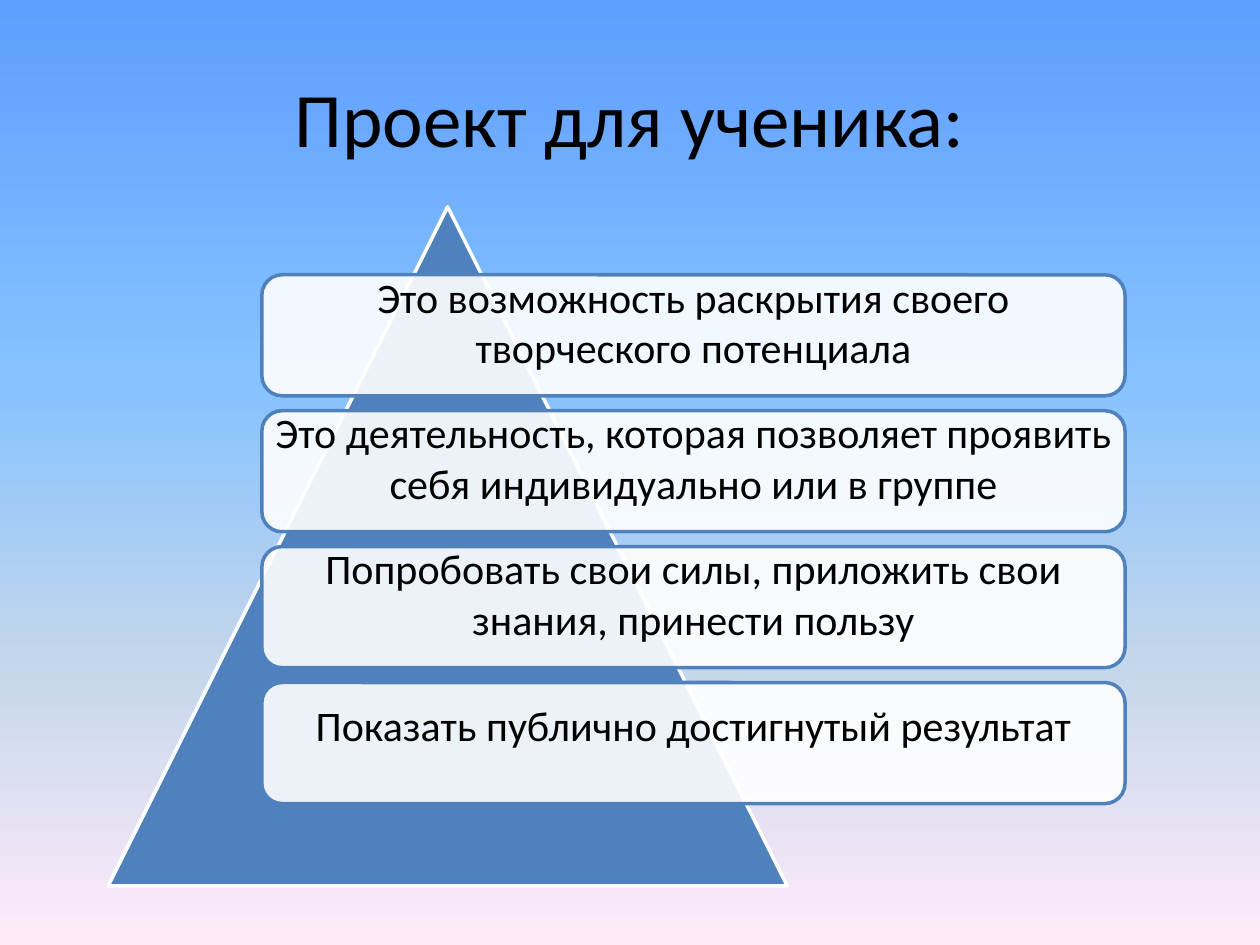
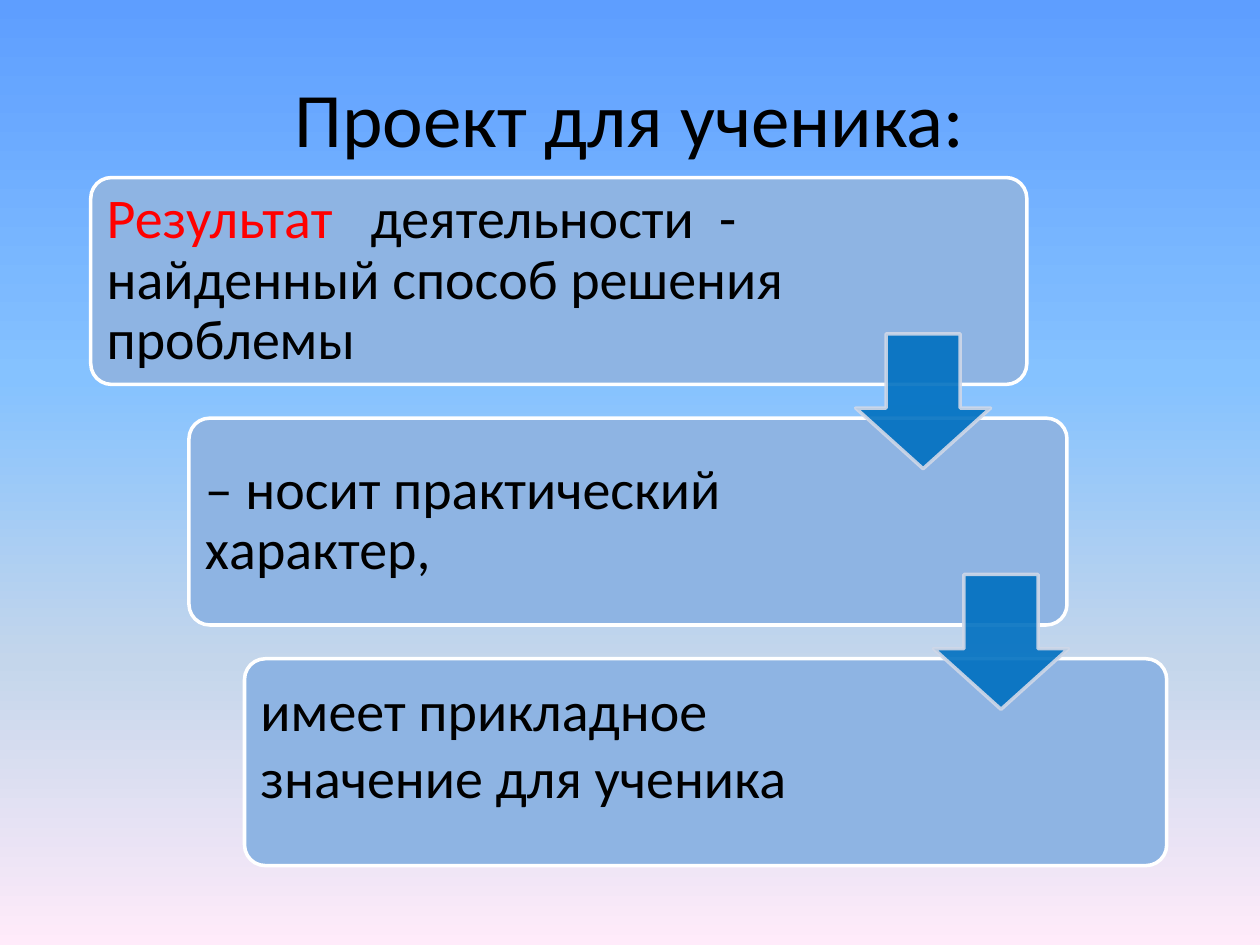
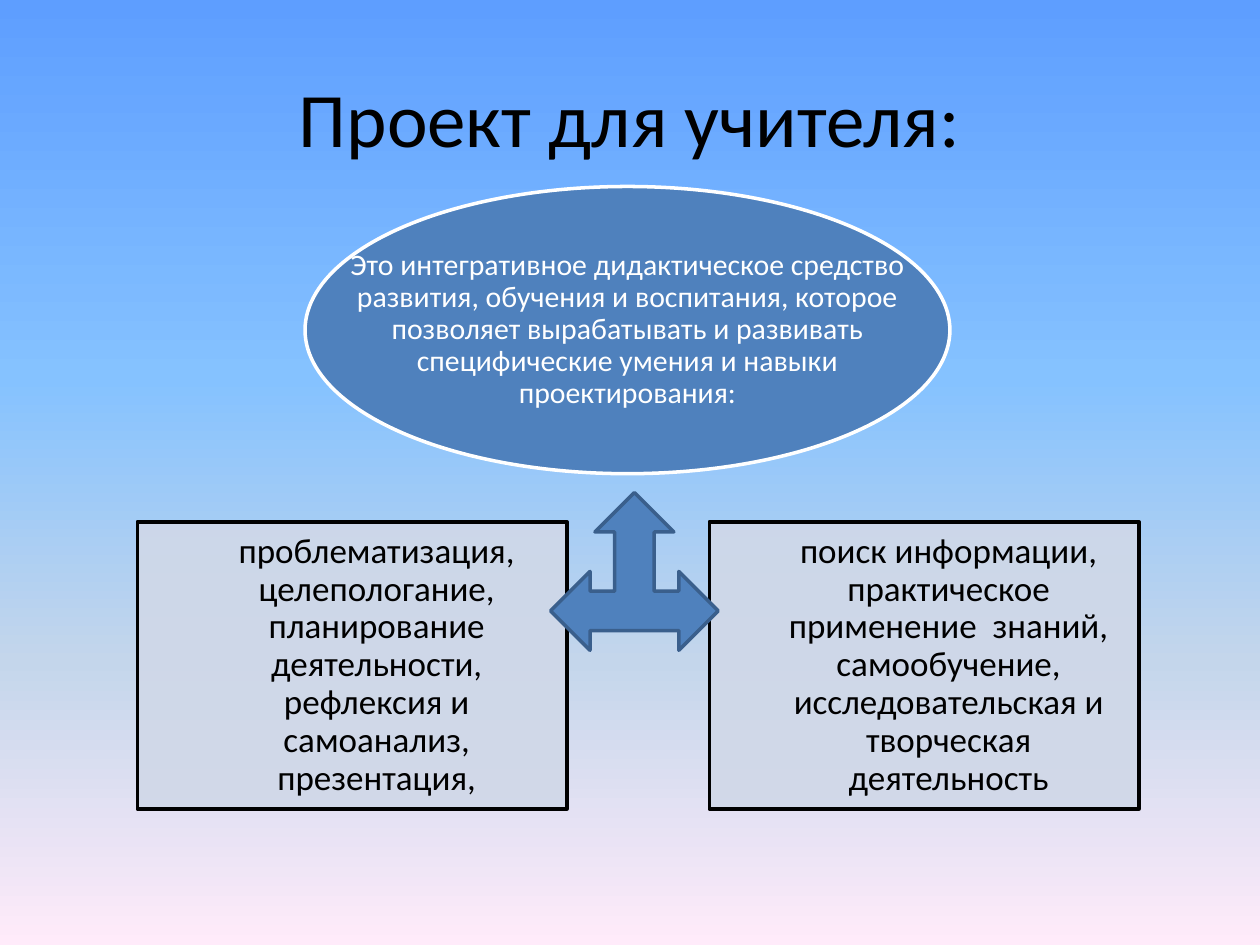
from lxml import etree
from pptx import Presentation
from pptx.dml.color import RGBColor
from pptx.enum.shapes import MSO_SHAPE
from pptx.enum.text import MSO_ANCHOR, PP_ALIGN
from pptx.oxml.ns import qn
from pptx.util import Cm, Pt

LEFT, CENTER = PP_ALIGN.LEFT, PP_ALIGN.CENTER
MIDDLE = MSO_ANCHOR.MIDDLE
ROUNDED, RECT = MSO_SHAPE.ROUNDED_RECTANGLE, MSO_SHAPE.RECTANGLE
TRIANGLE, OVAL = MSO_SHAPE.ISOSCELES_TRIANGLE, MSO_SHAPE.OVAL
DOWN_ARROW = MSO_SHAPE.DOWN_ARROW
THREE_WAY_ARROW = MSO_SHAPE.LEFT_RIGHT_UP_ARROW

FONT = "Calibri"
BLACK, WHITE, RED = "000000", "FFFFFF", "FF0000"
BLUE, DARK_BLUE, LIGHT_BLUE = "4F81BD", "3A5F8C", "8EB4E3"
ARROW_BLUE, PALE = "0070C0", "D0D8E8"
SKY = [(0, "5E9EFF"), (40, "85C2FF"), (70, "C4D6EB"), (100, "FFEBFA")]


def rgb(color):
    return RGBColor.from_string(color)


def paint_background(master):
    fill = master.background.fill
    fill.gradient()
    fill.gradient_angle = 270
    stops = master.element.find(".//" + qn("a:gsLst"))
    for stop in list(stops):
        stops.remove(stop)
    for percent, color in SKY:
        stop = etree.SubElement(stops, qn("a:gs"), pos=str(percent * 1000))
        etree.SubElement(stop, qn("a:srgbClr"), val=color)


def add_slide(prs, title):
    s = prs.slides.add_slide(prs.slide_layouts[5])
    s.shapes.title.text = title
    return s


def set_opacity(fill_parent, percent):
    color = fill_parent.find(qn("a:solidFill")).find(qn("a:srgbClr"))
    etree.SubElement(color, qn("a:alpha"), val=str(percent * 1000))


def add_figure(s, kind, box, fill, line, opacity=100, adjustments=()):
    """Add a preset shape; box is left, top, width, height in cm."""
    sp = s.shapes.add_shape(kind, *map(Cm, box))
    sp.shadow.inherit = False
    sp.fill.solid()
    sp.fill.fore_color.rgb = rgb(fill)
    sp.line.color.rgb = rgb(line)
    sp.line.width = Pt(2)
    for i, value in enumerate(adjustments):
        sp.adjustments[i] = value
    if opacity < 100:
        set_opacity(sp._element.spPr, opacity)
    return sp


def write(sp, runs, size, align=CENTER, spacing=0.9, left=0, right=0, bottom=0):
    """Fill a shape with one paragraph of (text, colour) runs; insets in cm."""
    tf = sp.text_frame
    frame = dict(word_wrap=True, vertical_anchor=MIDDLE, margin_top=0,
                 margin_left=Cm(left), margin_right=Cm(right),
                 margin_bottom=Cm(bottom))
    for name, value in frame.items():
        setattr(tf, name, value)
    p = tf.paragraphs[0]
    p.alignment = align
    p.line_spacing = spacing
    for text, color in runs:
        r = p.add_run()
        r.text = text
        for name, value in dict(name=FONT, size=Pt(size)).items():
            setattr(r.font, name, value)
        r.font.color.rgb = rgb(color)


def pyramid_slide(prs):
    s = add_slide(prs, "Проект для ученика:")
    add_figure(s, TRIANGLE, (2.18, 4.17, 13.69, 13.69), BLUE, WHITE)
    benefits = [
        ("Это возможность раскрытия своего творческого потенциала", 0.56),
        ("Это деятельность, которая позволяет проявить себя "
         "индивидуально или в группе", 0.56),
        ("Попробовать свои силы, приложить свои знания, "
         "принести пользу", 0.56),
        ("Показать публично достигнутый результат", 0.75),
    ]
    for i, (text, bottom) in enumerate(benefits):
        sp = add_figure(s, ROUNDED, (5.28, 5.54 + 2.74 * i, 17.4, 2.44),
                        WHITE, BLUE, opacity=90)
        write(sp, [(text, BLACK)], 24, spacing=1.0,
              left=0.1, right=0.1, bottom=bottom)


def steps_slide(prs):
    s = add_slide(prs, "Проект для ученика:")
    top, pitch = 3.58, 4.85
    steps = [
        (1.83, 18.87, 0.9, 0,
         [("Результат   ", RED),
          ("деятельности  - найденный способ решения проблемы", BLACK)]),
        (3.81, 17.7, 0.9, 0, [("– носит практический характер,", BLACK)]),
        (4.93, 18.59, 1.0, 0.8,
         [("имеет прикладное значение для ученика", BLACK)]),
    ]
    for i, (left, width, spacing, bottom, runs) in enumerate(steps):
        sp = add_figure(s, ROUNDED, (left, top + pitch * i, width, 4.17),
                        LIGHT_BLUE, WHITE, adjustments=[0.1])
        write(sp, runs, 32, LEFT, spacing, left=0.2, right=4.7, bottom=bottom)
    for i, left in enumerate([17.25, 18.82]):
        arrow = add_figure(s, DOWN_ARROW, (left, 6.73 + pitch * i, 2.72, 2.72),
                           ARROW_BLUE, PALE, 90, [0.55, 0.45])
        set_opacity(arrow.line._ln, 90)


def teacher_slide(prs):
    s = add_slide(prs, "Проект для учителя:")
    skills = [
        "проблематизация, целепологание, планирование деятельности, "
        "рефлексия и самоанализ, презентация,",
        "поиск информации, практическое применение  знаний, самообучение, "
        "исследовательская и творческая деятельность",
    ]
    for left, text in zip([2.77, 14.3], skills):
        sp = add_figure(s, RECT, (left, 10.52, 8.66, 5.79), PALE, BLACK, 90)
        write(sp, [(text, BLACK)], 20, left=1.4, right=0.41)

    oval_box = (6.15, 3.76, 13, 5.79)
    add_figure(s, OVAL, oval_box, BLUE, WHITE)
    definition = s.shapes.add_textbox(*map(Cm, oval_box))
    write(definition, [(
        "Это интегративное дидактическое средство развития, обучения и "
        "воспитания, которое позволяет вырабатывать и развивать "
        "специфические умения и навыки проектирования:", WHITE)], 17)
    add_figure(s, THREE_WAY_ARROW, (11.1, 9.93, 3.38, 3.18), BLUE, DARK_BLUE)


def main():
    prs = Presentation()
    prs.slide_width, prs.slide_height = Cm(25.4), Cm(19.05)
    paint_background(prs.slide_master)
    pyramid_slide(prs)
    steps_slide(prs)
    teacher_slide(prs)
    prs.save("out.pptx")


if __name__ == "__main__":
    main()
